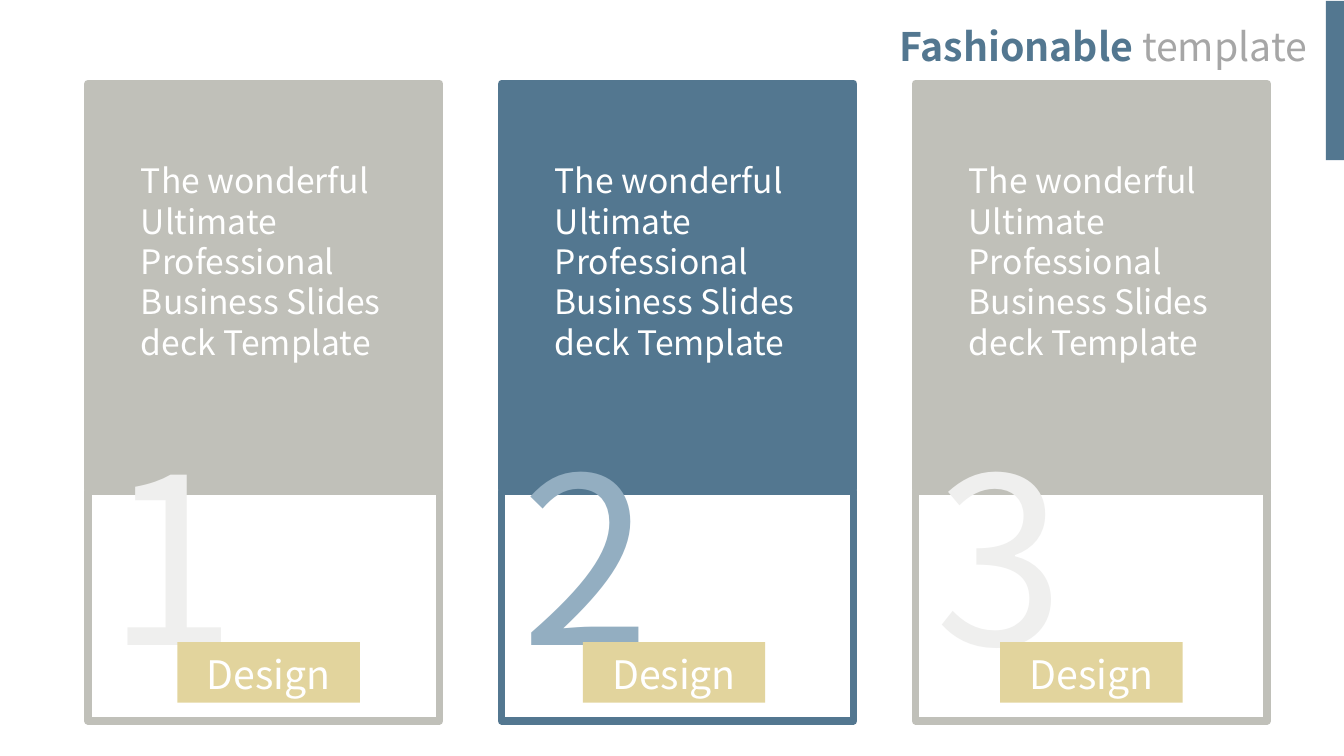
"""Build the slide of three numbered design panels."""
from dataclasses import dataclass

import pptx
import pptx.dml.color
import pptx.enum.shapes
import pptx.enum.text
import pptx.util

Inches = pptx.util.Inches
ALIGN = pptx.enum.text.PP_ALIGN


@dataclass(frozen=True)
class Theme:
    """Hold the font, colours and type sizes."""
    font: str = "Noto Sans CJK JP"
    white: str = "FFFFFF"
    stone: str = "C0C0B9"
    blue: str = "537790"
    pale_stone: str = "EFEFEE"
    pale_blue: str = "93AEC1"
    sand: str = "E2D49D"
    gray: str = "A6A6A6"
    heading_size: int = 28
    body_size: int = 24
    number_size: int = 166
    border_width: float = 5.5


THEME = Theme()
BODY = "The wonderful Ultimate Professional Business Slides deck Template"
PANEL_LEFT, PANEL_PITCH = 0.87, 4.105
PANELS = (
    ("1", THEME.stone, THEME.pale_stone, 1.76),
    ("2", THEME.blue, THEME.pale_blue, 5.78),
    ("3", THEME.stone, THEME.pale_stone, 9.92),
)


def rgb(color):
    """Turn a hex string into a colour."""
    return pptx.dml.color.RGBColor.from_string(color)


def set_values(target, values):
    """Set each named attribute of the target."""
    for name, value in values.items():
        setattr(target, name, value)


def add_rectangle(slide, box, fill, line=None):
    """Add a flat rectangle with an optional border."""
    shape = slide.shapes.add_shape(
        pptx.enum.shapes.MSO_SHAPE.RECTANGLE, *map(Inches, box))
    shape.shadow.inherit = False
    shape.fill.solid()
    shape.fill.fore_color.rgb = rgb(fill)
    if line:
        shape.line.color.rgb = rgb(line)
        shape.line.width = pptx.util.Pt(THEME.border_width)
    else:
        shape.line.fill.background()
    return shape


def write_text(shape, runs, size, align=ALIGN.LEFT, wrap=True, top=0.05):
    """Write one paragraph of (text, colour, bold) runs into a shape."""
    set_values(shape.text_frame, {
        "word_wrap": wrap,
        "auto_size": pptx.enum.text.MSO_AUTO_SIZE.SHAPE_TO_FIT_TEXT,
        "vertical_anchor": pptx.enum.text.MSO_ANCHOR.TOP,
        "margin_top": Inches(top),
    })
    paragraph = shape.text_frame.paragraphs[0]
    paragraph.alignment = align
    for text, color, bold in runs:
        run = paragraph.add_run()
        run.text = text
        set_values(run.font, {"name": THEME.font, "bold": bold,
                              "size": pptx.util.Pt(size)})
        run.font.color.rgb = rgb(color)


def add_text(slide, box, runs, size, **options):
    """Add a text box."""
    write_text(slide.shapes.add_textbox(*map(Inches, box)), runs, size, **options)


def add_panel(slide, left, number, color, number_color, label_left):
    """Add a panel with its body text, large number and label."""
    add_rectangle(slide, (left, 0.83, 3.49, 4.02), color, color)
    add_rectangle(slide, (left, 4.87, 3.49, 2.28), THEME.white, color)
    add_text(slide, (left + 0.1, 4.05, 1.65, 2.89),
             [(number, number_color, False)], THEME.number_size, wrap=False)
    add_text(slide, (left + 0.43, 1.54, 2.64, 2.52),
             [(BODY, THEME.white, False)], THEME.body_size)
    label = add_rectangle(slide, (label_left, 6.37, 1.81, 0.6), THEME.sand)
    write_text(label, [("Design", THEME.white, False)], THEME.heading_size,
               align=ALIGN.CENTER, top=0.08)


def add_heading(slide):
    """Add the corner bar and the two-tone heading."""
    add_rectangle(slide, (13.15, 0.01, 0.18, 1.58), THEME.blue)
    add_text(slide, (8.45, 0.17, 4.61, 0.57),
             [("Fashionable ", THEME.blue, True), ("template", THEME.gray, False)],
             THEME.heading_size, align=ALIGN.RIGHT)


def main():
    """Build and save the presentation."""
    presentation = pptx.Presentation()
    set_values(presentation, {"slide_width": Inches(13.33),
                              "slide_height": Inches(7.5)})
    slide = presentation.slides.add_slide(presentation.slide_layouts[6])
    for index, panel in enumerate(PANELS):
        add_panel(slide, PANEL_LEFT + index * PANEL_PITCH, *panel)
    add_heading(slide)
    presentation.save("out.pptx")


if __name__ == "__main__":
    main()
